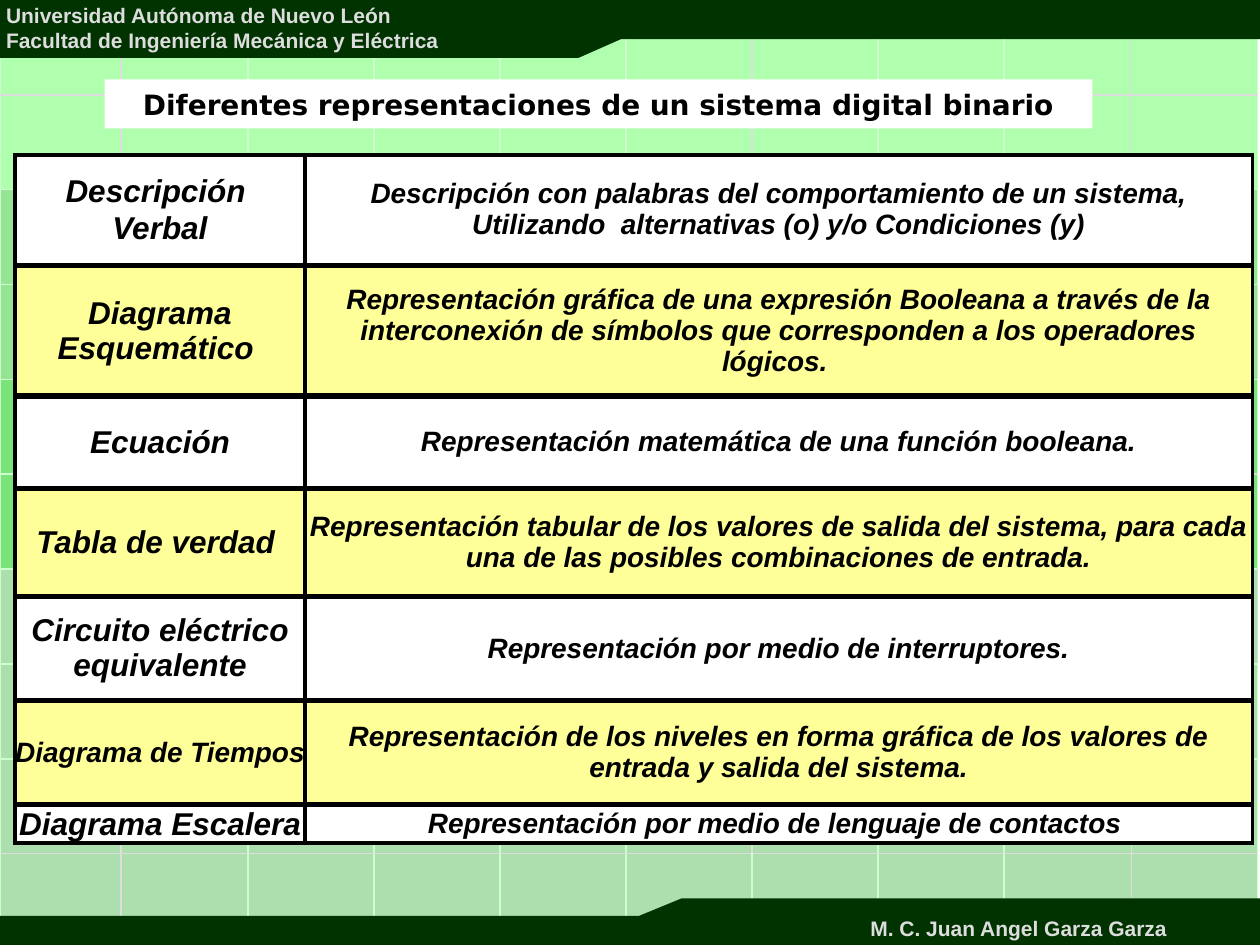
from dataclasses import dataclass

import lxml.etree
import pptx
import pptx.dml.color
import pptx.enum.text
import pptx.oxml.ns
import pptx.presentation
import pptx.shapes.autoshape
import pptx.slide
import pptx.table
import pptx.text.text
import pptx.util

Inches = pptx.util.Inches
Pt = pptx.util.Pt


@dataclass(frozen=True)
class Theme:
    font: str = "Arial"
    title_font: str = "DejaVu Sans"
    dark: str = "003300"
    pale: str = "DDDDDD"
    grid: str = "CCFFCC"
    ink: str = "000000"
    white: str = "FFFFFF"
    yellow: str = "FFFF99"
    banner_size: int = 12
    text_size: int = 16
    name_size: int = 18
    grid_line: float = 1
    frame_line: float = 2.25


@dataclass(frozen=True)
class Representation:
    name: str
    description: str
    height: float
    name_size: int
    space_after: float = 1


@dataclass(frozen=True)
class Band:
    """Background rows that share a colour and an opacity in percent."""
    rows: range
    color: str
    opacity: int


THEME = Theme()

REPRESENTATIONS = [
    Representation("Descripción \nVerbal",
                   "Descripción con palabras del comportamiento de un sistema, "
                   "Utilizando  alternativas (o) y/o Condiciones (y)",
                   0.87, THEME.name_size),
    Representation("Diagrama Esquemático ",
                   "Representación gráfica de una expresión Booleana a través de la "
                   "interconexión de símbolos que corresponden a los operadores lógicos. ",
                   1.02, THEME.name_size),
    Representation("Ecuación", "Representación matemática de una función booleana.",
                   0.72, THEME.name_size),
    Representation("Tabla de verdad ",
                   "Representación tabular de los valores de salida del sistema, "
                   "para cada una de las posibles combinaciones de entrada.",
                   0.84, THEME.name_size),
    Representation("Circuito eléctrico equivalente",
                   "Representación por medio de interruptores.",
                   0.81, THEME.name_size),
    Representation("Diagrama de Tiempos ",
                   "Representación de los niveles en forma gráfica de los valores "
                   "de entrada y salida del sistema.",
                   0.81, THEME.text_size),
    Representation("Diagrama Escalera",
                   "Representación por medio de lenguaje de contactos ",
                   0.3, THEME.name_size, 0),
]

BANDS = [
    Band(range(0, 2), "66FF66", 52),
    Band(range(2, 4), "33CC33", 52),
    Band(range(4, 6), "00CC00", 52),
    Band(range(6, 10), "009900", 32),
]
GRID_COUNT = 10
GRID_WIDTHS = [0.96, 1.01, 1, 1, 1, 1, 1, 1, 1.01, 1]
# Pale edges: column -> rows on its right side, row -> columns on its lower side.
PALE_RIGHT = {0: range(0, 10), 3: range(2, 8), 5: range(0, 9), 8: range(0, 10)}
PALE_BELOW = {0: range(0, 10), 2: range(3, 8), 4: range(1, 10), 8: range(0, 10)}
MERGES = [((0, 1), (1, 1)), ((0, 3), (1, 3)), ((0, 5), (1, 5)),
          ((3, 8), (3, 9)), ((6, 8), (6, 9))]

# Outlines in hundredths of an inch.
HEADER_OUTLINE = [(-1, 46), (-2, -2), (1000, -1), (1000, 31), (493, 31), (459, 46)]
FOOTER_OUTLINE = [(1001, 713), (1002, 755), (0, 754), (0, 727), (507, 727), (541, 713)]


def rgb(color: str) -> pptx.dml.color.RGBColor:
    return pptx.dml.color.RGBColor.from_string(color)


def set_font(para: pptx.text.text._Paragraph, size: int, color: str,
             name: str = THEME.font, italic: bool = False) -> None:
    para.font.name = name
    para.font.size = Pt(size)
    para.font.bold = True
    para.font.italic = italic
    para.font.color.rgb = rgb(color)


def style_cell(cell: pptx.table._Cell, fill: str, borders: dict[str, str],
               width: float, opacity: int = 100) -> None:
    """Set the borders (side letter to colour) first, as the schema orders them, then the fill."""
    properties = cell._tc.get_or_add_tcPr()
    qn = pptx.oxml.ns.qn
    for side in "LRTB":
        line = lxml.etree.SubElement(properties, qn(f"a:ln{side}"), w=str(Pt(width)))
        solid = lxml.etree.SubElement(line, qn("a:solidFill"))
        lxml.etree.SubElement(solid, qn("a:srgbClr"), val=borders[side])
    cell.fill.solid()
    cell.fill.fore_color.rgb = rgb(fill)
    if opacity < 100:
        color = properties.find(qn("a:solidFill")).find(qn("a:srgbClr"))
        lxml.etree.SubElement(color, qn("a:alpha"), val=str(opacity * 1000))


def add_plain_table(page: pptx.slide.Slide, rows: int, widths: list[float], left: float,
                    top: int, height: float) -> pptx.table.Table:
    table = page.shapes.add_table(rows, len(widths), Inches(left), top,
                                  Inches(sum(widths)), Inches(height)).table
    table.first_row = False
    table.horz_banding = False
    for column, width in zip(table.columns, widths):
        column.width = Inches(width)
    return table


def add_background(page: pptx.slide.Slide) -> None:
    table = add_plain_table(page, GRID_COUNT, GRID_WIDTHS, 0, 0, 7.53)

    def edge(pale: dict[int, range], line: int, position: int) -> str:
        return THEME.pale if position in pale.get(line, ()) else THEME.grid

    for band in BANDS:
        for row in band.rows:
            for column in range(GRID_COUNT):
                borders = {"L": edge(PALE_RIGHT, column - 1, row),
                           "R": edge(PALE_RIGHT, column, row),
                           "T": edge(PALE_BELOW, row - 1, column),
                           "B": edge(PALE_BELOW, row, column)}
                style_cell(table.cell(row, column), band.color, borders,
                           THEME.grid_line, band.opacity)
    for first, last in MERGES:
        table.cell(*first).merge(table.cell(*last))


def add_banner(page: pptx.slide.Slide,
               outline: list[tuple[int, int]]) -> pptx.shapes.autoshape.Shape:
    builder = page.shapes.build_freeform(*outline[0], scale=Inches(0.01))
    builder.add_line_segments(outline[1:], close=True)
    banner = builder.convert_to_shape()
    banner.shadow.inherit = False
    banner.fill.solid()
    banner.fill.fore_color.rgb = rgb(THEME.dark)
    banner.line.fill.background()
    return banner


def add_banner_text(page: pptx.slide.Slide, text: str, left: float, top: float,
                    width: float, height: float) -> None:
    box = page.shapes.add_textbox(Inches(left), Inches(top), Inches(width), Inches(height))
    box.text_frame.word_wrap = False
    box.text_frame.text = text
    for para in box.text_frame.paragraphs:
        set_font(para, THEME.banner_size, THEME.pale)


def place_title(page: pptx.slide.Slide) -> None:
    title = page.shapes.title
    title.left, title.top = Inches(0.83), Inches(0.63)
    title.width, title.height = Inches(7.84), Inches(0.39)
    title.fill.solid()
    title.fill.fore_color.rgb = rgb(THEME.white)
    title.text_frame.text = "Diferentes representaciones de un sistema digital binario"
    title.text_frame.vertical_anchor = pptx.enum.text.MSO_ANCHOR.MIDDLE
    para = title.text_frame.paragraphs[0]
    para.alignment = pptx.enum.text.PP_ALIGN.CENTER
    set_font(para, THEME.text_size, THEME.ink, THEME.title_font)
    page.shapes._spTree.append(title._element)  # in front of the background


def add_representation(page: pptx.slide.Slide, item: Representation, top: int,
                       fill: str) -> None:
    table = add_plain_table(page, 1, [2.3, 7.52], 0.12, top, item.height)
    contents = ((item.name, item.name_size), (item.description, THEME.text_size))
    for column, (text, size) in enumerate(contents):
        cell = table.cell(0, column)
        cell.margin_left = cell.margin_right = cell.margin_top = cell.margin_bottom = 0
        cell.vertical_anchor = pptx.enum.text.MSO_ANCHOR.MIDDLE
        style_cell(cell, fill, dict.fromkeys("LRTB", THEME.ink), THEME.frame_line)
        cell.text_frame.text = text
        for para in cell.text_frame.paragraphs:
            para.alignment = pptx.enum.text.PP_ALIGN.CENTER
            para.space_after = Pt(item.space_after)
            set_font(para, size, THEME.ink, italic=True)


def build_deck() -> pptx.presentation.Presentation:
    deck = pptx.Presentation()
    deck.slide_width, deck.slide_height = Inches(10), Inches(7.5)
    page = deck.slides.add_slide(deck.slide_layouts.get_by_name("Title Only"))
    add_background(page)
    add_banner(page, FOOTER_OUTLINE)
    add_banner(page, HEADER_OUTLINE)
    add_banner_text(page, "Universidad Autónoma de Nuevo León\n"
                          "Facultad de Ingeniería Mecánica y Eléctrica",
                    -0.05, -0.03, 3.64, 0.5)
    add_banner_text(page, "M. C. Juan Angel Garza Garza", 6.81, 7.22, 2.56, 0.3)
    place_title(page)
    top = Inches(1.23)
    for index, item in enumerate(REPRESENTATIONS):
        add_representation(page, item, top, THEME.yellow if index % 2 else THEME.white)
        top += Inches(item.height) + Pt(1.1)
    return deck


if __name__ == "__main__":
    build_deck().save("out.pptx")
